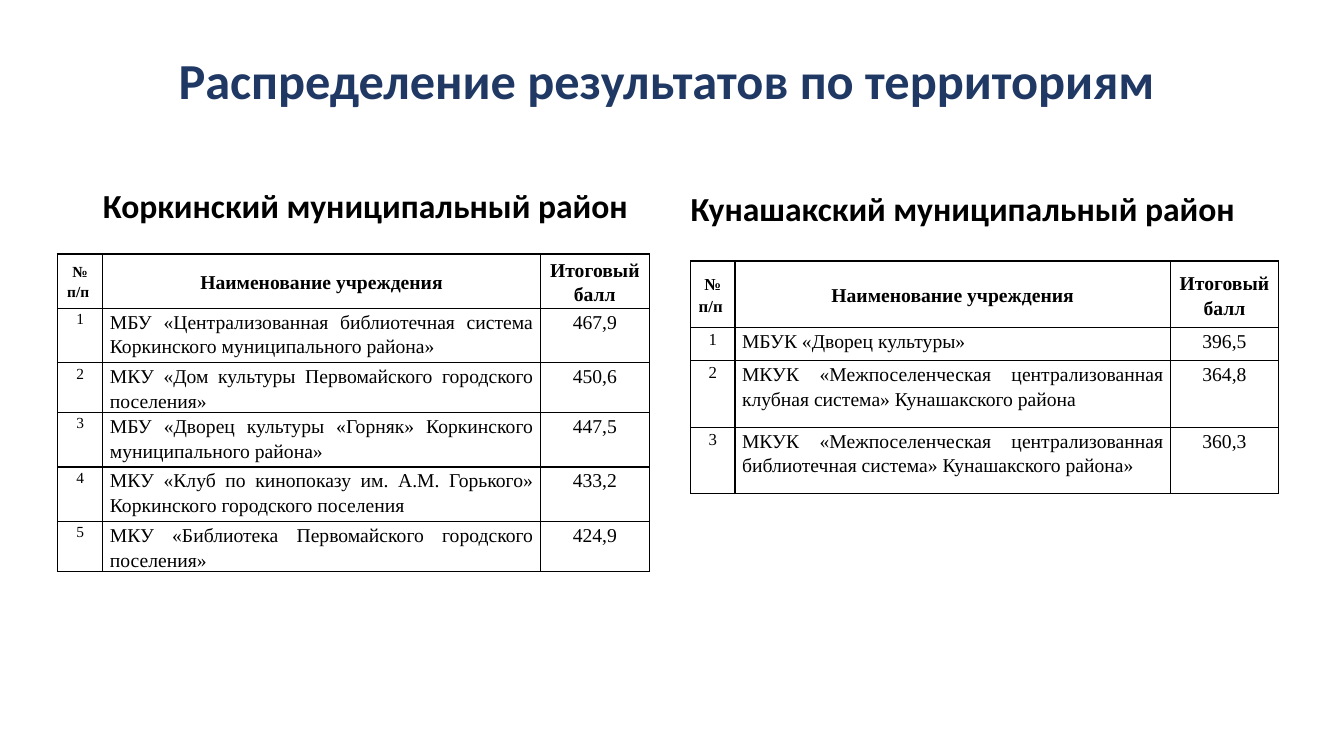
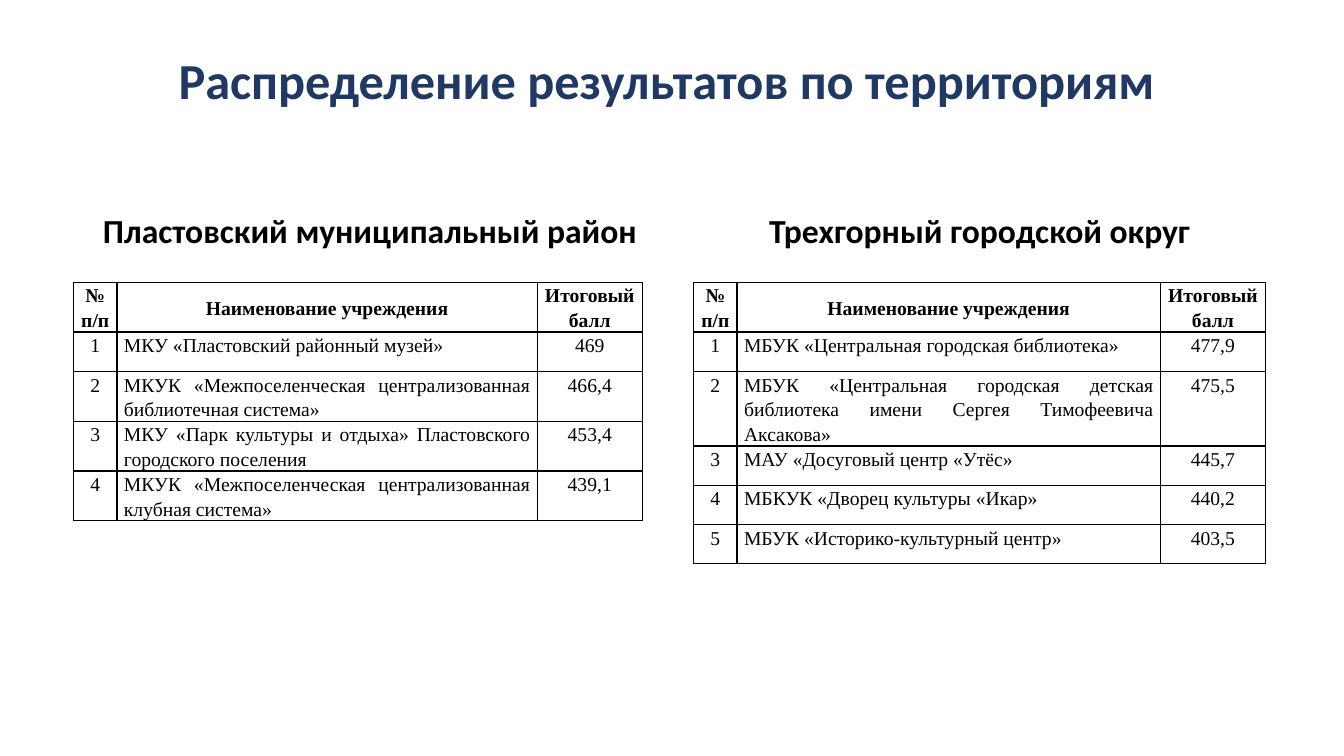
from dataclasses import dataclass

from lxml.etree import SubElement
from pptx import Presentation
from pptx.dml.color import RGBColor
from pptx.enum.text import MSO_ANCHOR, MSO_AUTO_SIZE, PP_ALIGN
from pptx.oxml.ns import qn
from pptx.util import Pt

PIXEL = 9144
SLIDE_WIDTH, SLIDE_HEIGHT = 1333, 750
COMPARISON_LAYOUT = 4
NAVY = RGBColor(0x20, 0x38, 0x64)
BLACK = RGBColor(0x00, 0x00, 0x00)
WHITE = RGBColor(0xFF, 0xFF, 0xFF)
HEADING_FONT, TABLE_FONT = "Calibri", "Times New Roman"
TITLE = "Распределение результатов по территориям "
TITLE_BOX = (92, 26, 1150, 113)
TABLE_HEADER = ("№ п/п ", "Наименование учреждения", "Итоговый балл")
NUMBER_SHARE, SCORE_SHARE = 0.076, 0.184
CELL_MARGIN = 7


@dataclass
class District:
    """A heading and a table of institutions, with their boxes in px."""
    name: str
    heading_box: tuple
    table_box: tuple
    row_heights: tuple
    results: tuple
    heading_align: PP_ALIGN = PP_ALIGN.CENTER
    number_size: int = 14


SLIDES = (
    (
        District(
            "Коркинский муниципальный район",
            (92, 139, 564, 90), (57, 252, 587), (54, 54, 27, 54, 54, 45),
            (
                ("МБУ «Централизованная библиотечная система Коркинского муниципального района»", "467,9"),
                ("МКУ «Дом культуры Первомайского городского поселения»", "450,6"),
                ("МБУ «Дворец культуры «Горняк» Коркинского муниципального района»", "447,5"),
                ("МКУ «Клуб по кинопоказу им. А.М. Горького» Коркинского городского поселения", "433,2"),
                ("МКУ «Библиотека Первомайского городского поселения»", "424,9"),
            ),
            heading_align=PP_ALIGN.LEFT, number_size=11,
        ),
        District(
            "Кунашакский муниципальный район",
            (675, 142, 567, 90), (685, 259, 583), (66, 33, 66, 66),
            (
                ("МБУК «Дворец культуры»", "396,5"),
                ("МКУК «Межпоселенческая централизованная клубная система» Кунашакского района", "364,8"),
                ("МКУК «Межпоселенческая централизованная библиотечная система» Кунашакского района»", "360,3"),
            ),
            heading_align=PP_ALIGN.LEFT, number_size=12,
        ),
    ),
    (
        District(
            "Пластовский муниципальный район",
            (85, 164, 564, 90), (73, 280, 564), (43, 39, 43, 43, 43),
            (
                ("МКУ «Пластовский районный музей»", "469"),
                ("МКУК «Межпоселенческая централизованная библиотечная система»", "466,4"),
                ("МКУ «Парк культуры и отдыха» Пластовского городского поселения", "453,4"),
                ("МКУК «Межпоселенческая централизованная клубная система»", "439,1"),
            ),
        ),
        District(
            "Трехгорный городской округ",
            (688, 164, 567, 90), (688, 280, 567), (43, 39, 52, 39, 39, 39),
            (
                ("МБУК «Центральная городская библиотека»", "477,9"),
                ("МБУК «Центральная городская детская библиотека имени Сергея Тимофеевича Аксакова»", "475,5"),
                ("МАУ «Досуговый центр «Утёс»", "445,7"),
                ("МБКУК «Дворец культуры «Икар»", "440,2"),
                ("МБУК «Историко-культурный центр»", "403,5"),
            ),
        ),
    ),
)


def write_text(text_frame, text, *, size, font, color=BLACK, bold=False,
               align=PP_ALIGN.CENTER, line_spacing=0.9, space_before=0):
    """Put one formatted paragraph into a text frame."""
    paragraph = text_frame.paragraphs[0]
    paragraph.alignment = align
    paragraph.line_spacing = line_spacing
    paragraph.space_before = Pt(space_before)
    run = paragraph.add_run()
    run.text = text
    run.font.size = Pt(size)
    run.font.name = font
    run.font.bold = bold
    run.font.color.rgb = color


def fill_placeholder(shape, text, box, anchor, **text_format):
    """Move a placeholder into a box and write its text."""
    shape.left, shape.top, shape.width, shape.height = (length * PIXEL for length in box)
    text_frame = shape.text_frame
    text_frame.auto_size = MSO_AUTO_SIZE.NONE
    text_frame.word_wrap = True
    text_frame.vertical_anchor = anchor
    write_text(text_frame, text, font=HEADING_FONT, bold=True, **text_format)


def add_borders(cell):
    """Draw a thin black line on each side of a cell."""
    properties = cell._tc.get_or_add_tcPr()
    for position, side in enumerate(("a:lnL", "a:lnR", "a:lnT", "a:lnB")):
        line = SubElement(properties, qn(side), w=str(Pt(1)))
        color = SubElement(SubElement(line, qn("a:solidFill")), qn("a:srgbClr"))
        color.set("val", str(BLACK))
        properties.insert(position, line)


def format_cell(cell, text, is_header, size, align):
    """Set the fill, margins, borders and text of a cell."""
    cell.fill.solid()
    cell.fill.fore_color.rgb = WHITE
    cell.margin_left = cell.margin_right = CELL_MARGIN * PIXEL
    cell.margin_top = cell.margin_bottom = 0
    cell.vertical_anchor = MSO_ANCHOR.MIDDLE if is_header else MSO_ANCHOR.TOP
    add_borders(cell)
    write_text(cell.text_frame, text, size=size, font=TABLE_FONT,
               bold=is_header, align=align, line_spacing=1.15)


def add_results_table(slide, district):
    """Add the table of a district's institutions and scores."""
    left, top, width = district.table_box
    rows = [TABLE_HEADER]
    rows += [(str(number), *result) for number, result in enumerate(district.results, 1)]
    table = slide.shapes.add_table(
        len(rows), len(TABLE_HEADER), left * PIXEL, top * PIXEL,
        width * PIXEL, sum(district.row_heights) * PIXEL).table
    table.first_row = table.horz_banding = False
    number_width, score_width = round(width * NUMBER_SHARE), round(width * SCORE_SHARE)
    column_widths = (number_width, width - number_width - score_width, score_width)
    for column, column_width in zip(table.columns, column_widths):
        column.width = column_width * PIXEL
    for row_index, values in enumerate(rows):
        table.rows[row_index].height = district.row_heights[row_index] * PIXEL
        is_header = row_index == 0
        for column_index, text in enumerate(values):
            is_name = column_index == 1 and not is_header
            format_cell(table.cell(row_index, column_index), text, is_header,
                        size=district.number_size if column_index == 0 else 14,
                        align=PP_ALIGN.JUSTIFY if is_name else PP_ALIGN.CENTER)


def add_district(slide, placeholder, district):
    """Add the heading and the table of one district."""
    fill_placeholder(placeholder, district.name, district.heading_box, MSO_ANCHOR.BOTTOM,
                     size=24, align=district.heading_align, space_before=10)
    add_results_table(slide, district)


def add_comparison_slide(presentation, districts):
    """Add a slide that sets two districts side by side."""
    slide = presentation.slides.add_slide(presentation.slide_layouts[COMPARISON_LAYOUT])
    title, left_heading, left_content, right_heading, right_content = slide.placeholders
    for content in (left_content, right_content):
        content.element.getparent().remove(content.element)
    fill_placeholder(title, TITLE, TITLE_BOX, MSO_ANCHOR.MIDDLE, size=36, color=NAVY)
    for heading, district in zip((left_heading, right_heading), districts):
        add_district(slide, heading, district)


def main():
    """Build and save the presentation."""
    presentation = Presentation()
    presentation.slide_width = SLIDE_WIDTH * PIXEL
    presentation.slide_height = SLIDE_HEIGHT * PIXEL
    for districts in SLIDES:
        add_comparison_slide(presentation, districts)
    presentation.save("out.pptx")


if __name__ == "__main__":
    main()
